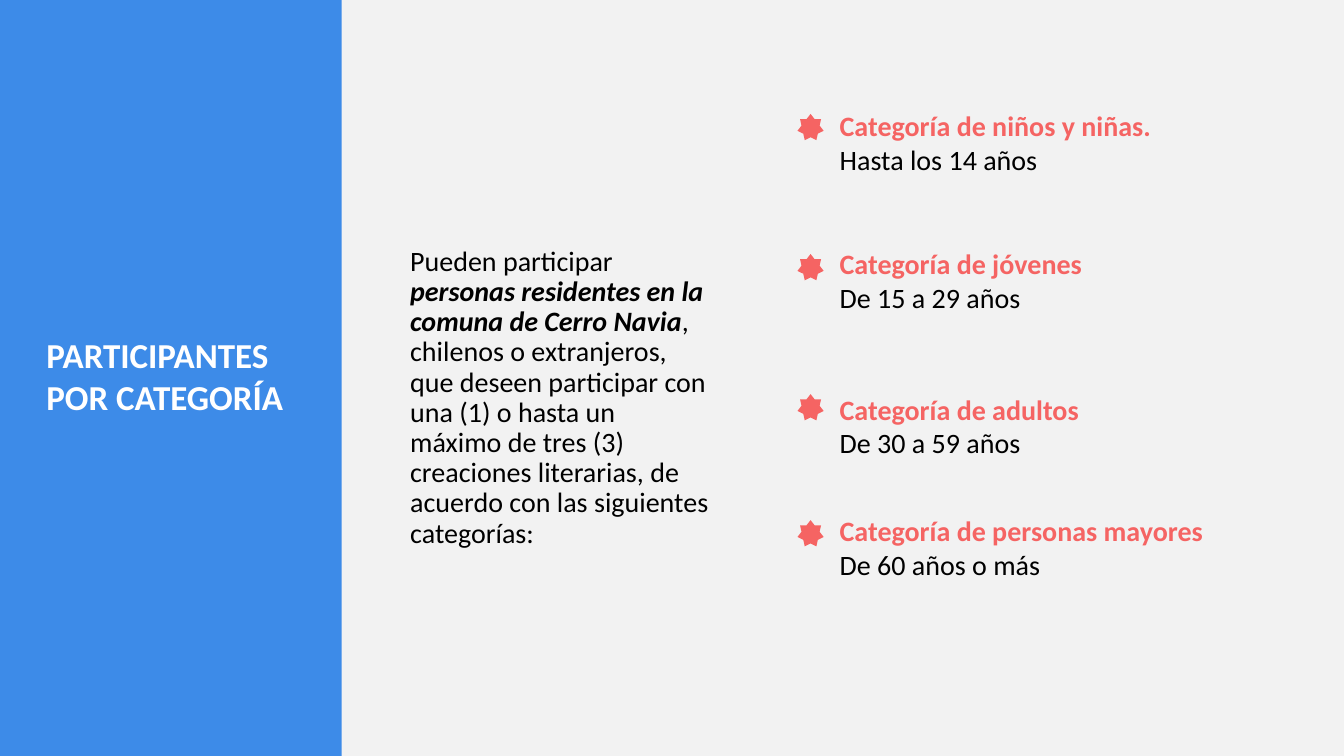
from pptx import Presentation
from pptx.dml.color import RGBColor
from pptx.enum.shapes import MSO_SHAPE
from pptx.enum.text import MSO_ANCHOR, MSO_AUTO_SIZE, PP_ALIGN
from pptx.util import Inches, Pt

RECTANGLE, STAR = MSO_SHAPE.RECTANGLE, MSO_SHAPE.STAR_7_POINT
TOP, LEFT, NO_FIT = MSO_ANCHOR.TOP, PP_ALIGN.LEFT, MSO_AUTO_SIZE.NONE
TITLE_ONLY = 5

COLORS = {"background": "F2F2F2", "panel": "3D8BE8", "accent": "F56463",
          "text": "000000", "title": "FFFFFF"}


def color(name):
    return RGBColor.from_string(COLORS[name])


class SlideBuilder:
    """Places elements by percent shares of the slide's width and height."""

    font_name = "Calibri"

    def __init__(self, deck):
        self.width, self.height = deck.slide_width, deck.slide_height
        self.slide = deck.slides.add_slide(deck.slide_layouts[TITLE_ONLY])
        self.slide.background.fill.solid()
        self.slide.background.fill.fore_color.rgb = color("background")

    def place(self, left, top, width, height):
        return [round(share * side / 100) for share, side in
                zip((left, top, width, height), (self.width, self.height) * 2)]

    def shape(self, preset, box, fill):
        shape = self.slide.shapes.add_shape(preset, *self.place(*box))
        shape.shadow.inherit = False
        shape.fill.solid()
        shape.fill.fore_color.rgb = color(fill)
        shape.line.fill.background()
        return shape

    def fill_text(self, frame, paragraphs, size, spacing=1.0):
        """Each paragraph is a list of (words, colour, font formats) runs."""
        frame_format = {"word_wrap": True, "auto_size": NO_FIT, "vertical_anchor": TOP}
        for attribute, value in frame_format.items():
            setattr(frame, attribute, value)
        paragraph_format = {"alignment": LEFT, "line_spacing": spacing,
                            "space_before": Pt(0), "space_after": Pt(0)}
        for index, runs in enumerate(paragraphs):
            paragraph = frame.add_paragraph() if index else frame.paragraphs[0]
            for attribute, value in paragraph_format.items():
                setattr(paragraph, attribute, value)
            for words, ink, formats in runs:
                run = paragraph.add_run()
                run.text = words
                run.font.color.rgb = color(ink)
                base = {"name": self.font_name, "size": Pt(size)}
                for attribute, value in {**base, **formats}.items():
                    setattr(run.font, attribute, value)

    def text(self, box, paragraphs, size, spacing=1.0):
        textbox = self.slide.shapes.add_textbox(*self.place(*box))
        self.fill_text(textbox.text_frame, paragraphs, size, spacing)

    def title(self, box, lines, size):
        title = self.slide.shapes.title
        title.left, title.top, title.width, title.height = self.place(*box)
        self.fill_text(title.text_frame,
                       [[(line, "title", {"bold": True})] for line in lines], size)
        return title


def main():
    deck = Presentation()
    deck.slide_width, deck.slide_height = Inches(13.33), Inches(7.5)
    builder = SlideBuilder(deck)

    # Side panel, kept behind the title
    panel = builder.shape(RECTANGLE, (0, 0, 25.43, 100), "panel")
    heading = builder.title((2.7, 43.47, 27.08, 16.4),
                            ["PARTICIPANTES", "POR CATEGORÍA"], 25)
    heading.element.addprevious(panel.element)

    # Who may take part
    builder.text((29.78, 32, 23.78, 55.33), [[
        ("Pueden participar ", "text", {}),
        ("personas residentes en la comuna de Cerro Navia", "text",
         {"bold": True, "italic": True}),
        (", chilenos o extranjeros, que deseen participar con una (1) o hasta "
         "un máximo de tres (3) creaciones literarias, de acuerdo con las "
         "siguientes categorías:", "text", {}),
    ]], 20, spacing=0.9)

    # Categories: name, ages, top of the text, top of the star
    categories = [
        ("Categoría de niños y niñas.", "Hasta los 14 años", 13.73, 15.07),
        ("Categoría de jóvenes", "De 15 a 29 años", 32, 33.6),
        ("Categoría de adultos", "De 30 a 59 años", 51.2, 52.13),
        ("Categoría de personas mayores", "De 60 años o más", 67.33, 68.8),
    ]
    for category, ages, text_top, star_top in categories:
        builder.text((61.74, text_top, 38.26, 10.27),
                     [[(category, "accent", {"bold": True})],
                      [(ages, "text", {})]], 20)
        builder.shape(STAR, (59.34, star_top, 1.95, 3.47), "accent")

    deck.save("out.pptx")


if __name__ == "__main__":
    main()
